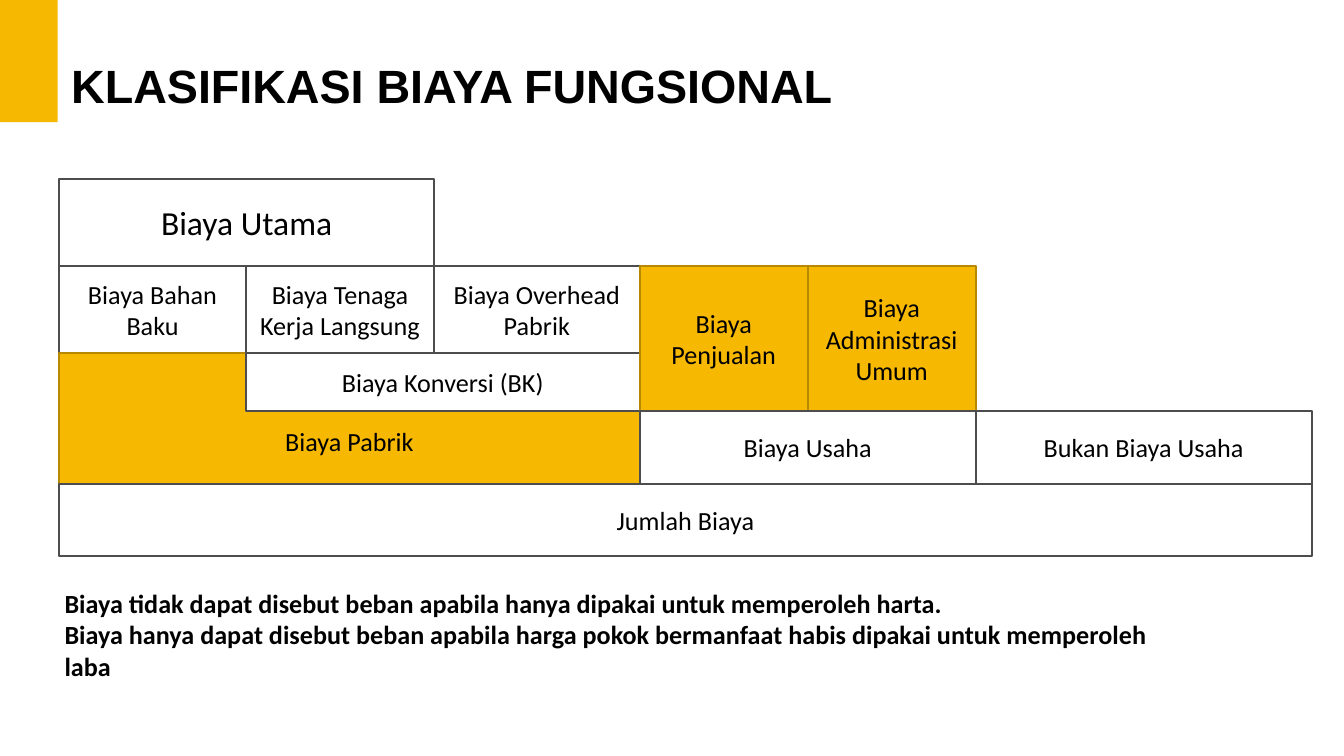
from pptx import Presentation
from pptx.dml.color import RGBColor
from pptx.enum.shapes import MSO_SHAPE
from pptx.enum.text import MSO_ANCHOR, MSO_AUTO_SIZE, PP_ALIGN
from pptx.util import Inches, Pt
from lxml import etree

RECTANGLE = MSO_SHAPE.RECTANGLE
TOP, MIDDLE = MSO_ANCHOR.TOP, MSO_ANCHOR.MIDDLE
LEFT, CENTER = PP_ALIGN.LEFT, PP_ALIGN.CENTER
GROW = MSO_AUTO_SIZE.SHAPE_TO_FIT_TEXT
DRAWING = "http://schemas.openxmlformats.org/drawingml/2006/main"

THEME = {
    "black": RGBColor.from_string("000000"),
    "white": RGBColor.from_string("FFFFFF"),
    "gray": RGBColor.from_string("4D4D4D"),
    "gold": RGBColor.from_string("F7B801"),
    "dark gold": RGBColor.from_string("B78801"),
    "title": {"name": "Arial", "size": Pt(25), "bold": True},
    "heading": {"name": "Calibri", "size": Pt(18), "bold": False},
    "label": {"name": "Calibri", "size": Pt(14), "bold": False},
    "note": {"name": "Calibri", "size": Pt(14), "bold": True},
}


def write(para, text, style, align):
    span = para.add_run()
    span.text = text
    para.alignment = align
    for name, value in THEME[style].items():
        setattr(span.font, name, value)
    span.font.color.rgb = THEME["black"]


def place(shape, left, top, width, height):
    frame = {"left": left, "top": top, "width": width, "height": height}
    for name, value in frame.items():
        setattr(shape, name, Inches(value))


# Widescreen page, 16:9
deck = Presentation()
deck.slide_width, deck.slide_height = Inches(10), Inches(10 * 9 / 16)
page = deck.slides.add_slide(deck.slide_layouts[1])

# Title
title = page.shapes.title
place(title, 0.43, 0.37, 5.92, 0.52)
frame = title.text_frame
frame.word_wrap, frame.auto_size, frame.vertical_anchor = False, GROW, TOP
write(frame.paragraphs[0], "KLASIFIKASI BIAYA FUNGSIONAL", "title", LEFT)

# Cost blocks: each spans grid lines (first column, last column, first row, last row)
COLUMNS = [0.44, 1.83, 3.23, 4.76, 6.01, 7.26, 9.76]
ROWS = [1.33, 1.98, 2.63, 3.06, 3.6, 4.14]
PLAIN, ACCENT = ("white", "gray"), ("gold", "dark gold")
blocks = [
    ("Biaya Utama", 0, 2, 0, 1, PLAIN),
    ("Biaya Bahan Baku", 0, 1, 1, 2, PLAIN),
    ("Biaya Tenaga Kerja Langsung", 1, 2, 1, 2, PLAIN),
    ("Biaya Overhead Pabrik", 2, 3, 1, 2, PLAIN),
    ("Biaya Pabrik", 0, 3, 2, 4, ACCENT),
    ("Biaya Konversi (BK)", 1, 3, 2, 3, PLAIN),
    ("Biaya Penjualan", 3, 4, 1, 3, ACCENT),
    ("Biaya Administrasi Umum", 4, 5, 1, 3, ACCENT),
    ("Biaya Usaha", 3, 5, 3, 4, PLAIN),
    ("Bukan Biaya Usaha", 5, 6, 3, 4, PLAIN),
    ("Jumlah Biaya", 0, 6, 4, 5, PLAIN),
]
for text, start, end, upper, lower, (fill, line) in blocks:
    left, top = COLUMNS[start], ROWS[upper]
    size = COLUMNS[end] - left, ROWS[lower] - top
    box = page.shapes.add_shape(RECTANGLE, *map(Inches, (left, top, *size)))
    box.shadow.inherit = False
    box.fill.solid()
    box.fill.fore_color.rgb = THEME[fill]
    box.line.color.rgb = THEME[line]
    box.line.width = Pt(1)
    frame = box.text_frame
    frame.word_wrap, frame.vertical_anchor = True, MIDDLE
    if text == "Biaya Pabrik":  # keep the label below the block that overlaps it
        frame.margin_top = Inches(0.39)
    style = "heading" if text == "Biaya Utama" else "label"
    write(frame.paragraphs[0], text, style, CENTER)

# Notes under the diagram
notes = [
    "Biaya tidak dapat disebut beban apabila hanya dipakai untuk memperoleh harta.",
    "Biaya hanya dapat disebut beban apabila harga pokok bermanfaat habis dipakai "
    "untuk memperoleh laba",
]
body = page.placeholders[1]
place(body, 0.27, 4.32, 8.38, 0.57)
frame = body.text_frame
frame.word_wrap, frame.auto_size, frame.vertical_anchor = True, GROW, TOP
for index, text in enumerate(notes):
    para = frame.add_paragraph() if index else frame.paragraphs[0]
    para.space_before = Pt(0)
    properties = para._p.get_or_add_pPr()
    properties.set("marL", str(Inches(0.11)))
    properties.set("indent", "0")
    etree.SubElement(properties, f"{{{DRAWING}}}buNone")
    write(para, text, "note", LEFT)

# Corner accent
corner = page.shapes.add_shape(RECTANGLE, 0, 0, Inches(0.43), Inches(0.91))
corner.shadow.inherit = False
corner.fill.solid()
corner.fill.fore_color.rgb = THEME["gold"]
corner.line.fill.background()

deck.save("out.pptx")
